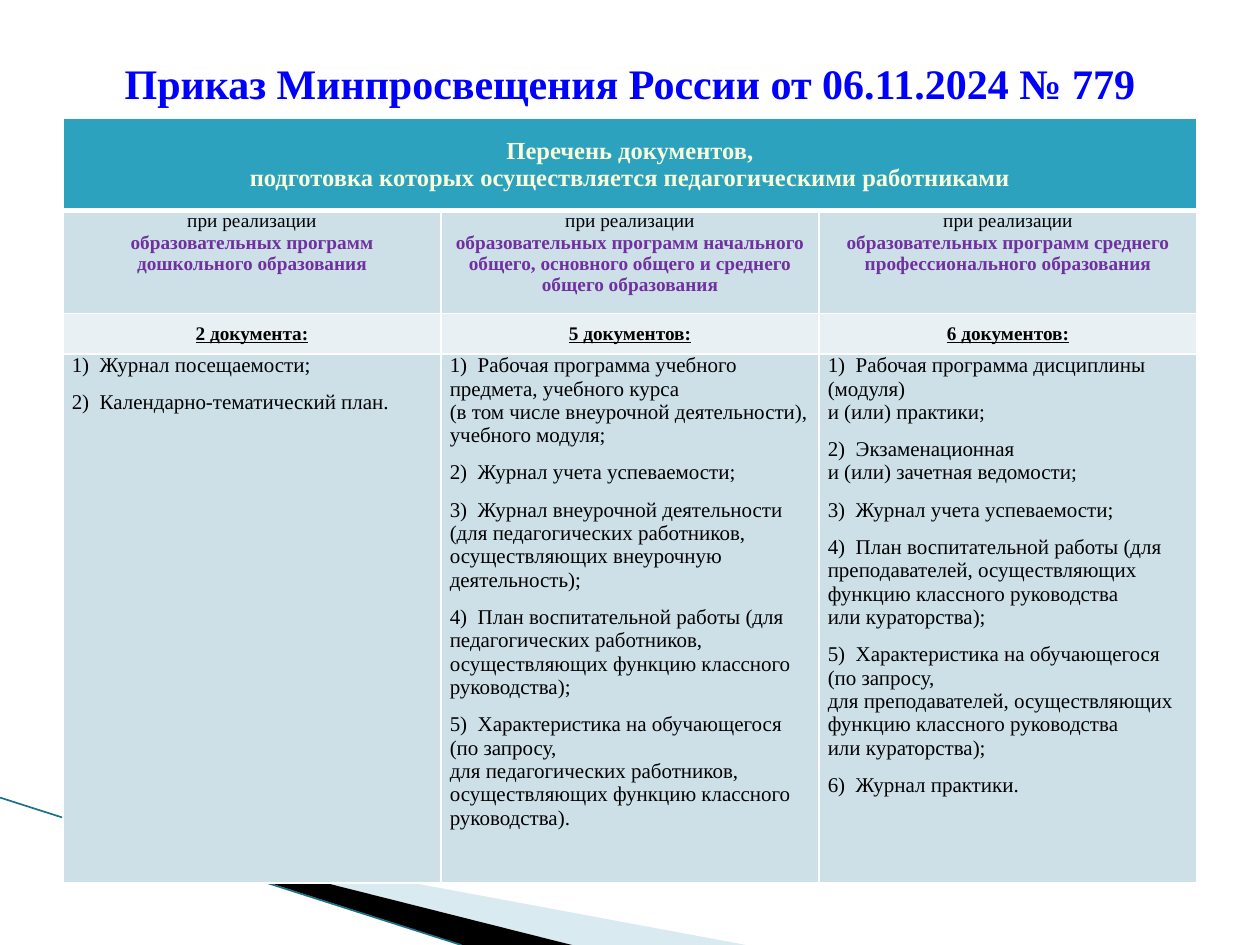
from copy import deepcopy

from lxml.etree import SubElement
from pptx import Presentation
from pptx.dml.color import RGBColor
from pptx.enum.shapes import MSO_CONNECTOR
from pptx.enum.text import MSO_ANCHOR, MSO_AUTO_SIZE, PP_ALIGN
from pptx.oxml.ns import qn
from pptx.util import Inches, Pt

FONT = "Times New Roman"
ROW_HEIGHTS = [0.73, 0.82, 0.32, 4.2]
COLUMN_WIDTH = 3
NUMBER_GAP = "  "

HEADING = ["Перечень документов,", "подготовка которых осуществляется педагогическими работниками"]
PROGRAMS = [
    (
        "образовательных программ дошкольного образования",
        "2 документа:",
        ["Журнал посещаемости;", "Календарно-тематический план."],
    ),
    (
        "образовательных программ начального общего, основного общего и среднего общего образования",
        "5 документов:",
        [
            "Рабочая программа учебного предмета, учебного курса \n"
            "(в том числе внеурочной деятельности), учебного модуля;",
            "Журнал учета успеваемости;",
            "Журнал внеурочной деятельности \n"
            "(для педагогических работников, осуществляющих внеурочную деятельность);",
            "План воспитательной работы (для педагогических работников, "
            "осуществляющих функцию классного руководства);",
            "Характеристика на обучающегося (по запросу, \n"
            "для педагогических работников, осуществляющих функцию классного руководства).",
        ],
    ),
    (
        "образовательных программ среднего профессионального образования",
        "6 документов:",
        [
            "Рабочая программа дисциплины (модуля) \nи (или) практики;",
            "Экзаменационная \nи (или) зачетная ведомости;",
            "Журнал учета успеваемости;",
            "План воспитательной работы (для преподавателей, осуществляющих "
            "функцию классного руководства \nили кураторства);",
            "Характеристика на обучающегося (по запросу, \n"
            "для преподавателей, осуществляющих функцию классного руководства \nили кураторства);",
            "Журнал практики.",
        ],
    ),
]


def color(hex_value):
    return RGBColor.from_string(hex_value)


def write(frame, text, first=False, size=12, hex_color="000000", bold=False,
          underline=False, align=PP_ALIGN.LEFT, after=0):
    paragraph = frame.paragraphs[0] if first else frame.add_paragraph()
    paragraph.text = text
    paragraph.alignment = align
    paragraph.space_after = Pt(after)
    for run in paragraph.runs:
        run.font.name = FONT
        run.font.size = Pt(size)
        run.font.bold = bold
        run.font.underline = underline
        run.font.color.rgb = color(hex_color)
    for line_break in paragraph._p.findall(qn("a:br")):
        line_break.append(deepcopy(paragraph.runs[0]._r.rPr))


def add_border(cell, side, width):
    border = SubElement(cell._tc.get_or_add_tcPr(), qn(f"a:ln{side}"), w=str(Pt(width)))
    fill = SubElement(border, qn("a:solidFill"))
    SubElement(fill, qn("a:srgbClr"), val="FFFFFF")


def format_cell(cell, row, hex_fill, anchor):
    widths = {"L": 1, "R": 1, "T": 3 if row == 1 else 1, "B": 3 if row == 0 else 1}
    for side, width in widths.items():
        add_border(cell, side, width)
    cell.fill.solid()
    cell.fill.fore_color.rgb = color(hex_fill)
    cell.vertical_anchor = anchor
    cell.margin_left = cell.margin_right = Inches(0.07)
    cell.margin_top = cell.margin_bottom = 0


def add_wedge(slide, points, hex_fill, opacity=100):
    corners = [(Inches(x), Inches(y)) for x, y in points]
    builder = slide.shapes.build_freeform(*corners[0])
    builder.add_line_segments(corners[1:], close=True)
    wedge = builder.convert_to_shape()
    wedge.shadow.inherit = False
    wedge.line.fill.background()
    wedge.fill.solid()
    wedge.fill.fore_color.rgb = color(hex_fill)
    if opacity < 100:
        tint = wedge._element.spPr.find(qn("a:solidFill"))[0]
        SubElement(tint, qn("a:alpha"), val=str(opacity * 1000))


def add_edge(slide, start, end, hex_color):
    edge = slide.shapes.add_connector(
        MSO_CONNECTOR.STRAIGHT, *[Inches(value) for value in (*start, *end)])
    edge.line.color.rgb = color(hex_color)
    edge.line.width = Pt(0.95)
    SubElement(edge._element.spPr, qn("a:effectLst"))


def fill_title(slide, text):
    title = slide.shapes.title
    title.left, title.top = Inches(0.5), Inches(0.3)
    title.width, title.height = Inches(9), Inches(0.72)
    frame = title.text_frame
    frame.auto_size = MSO_AUTO_SIZE.NONE
    frame.vertical_anchor = MSO_ANCHOR.MIDDLE
    write(frame, text, first=True, size=24, hex_color="0000FF", bold=True, align=PP_ALIGN.CENTER)


def add_documents_table(slide):
    table = slide.shapes.add_table(
        len(ROW_HEIGHTS), len(PROGRAMS), Inches(0.5), Inches(0.94),
        Inches(COLUMN_WIDTH * len(PROGRAMS)), Inches(sum(ROW_HEIGHTS))).table
    for column in table.columns:
        column.width = Inches(COLUMN_WIDTH)
    fills = ["2DA2BF", "CDE0E8", "E8F0F4", "CDE0E8"]
    anchors = [MSO_ANCHOR.MIDDLE, MSO_ANCHOR.TOP] * 2
    for row, height in enumerate(ROW_HEIGHTS):
        table.rows[row].height = Inches(height)
        for cell in table.rows[row].cells:
            format_cell(cell, row, fills[row], anchors[row])

    heading = table.cell(0, 0)
    heading.merge(table.cell(0, len(PROGRAMS) - 1))
    for index, line in enumerate(HEADING):
        write(heading.text_frame, line, first=index == 0, size=14, hex_color="F8FEDA",
              bold=True, align=PP_ALIGN.CENTER)

    for column, (program, count, documents) in enumerate(PROGRAMS):
        scope, total, listing = [table.cell(row, column).text_frame for row in (1, 2, 3)]
        write(scope, "при реализации", first=True, size=11, align=PP_ALIGN.CENTER)
        write(scope, program, size=11, hex_color="7030A0", bold=True, align=PP_ALIGN.CENTER)
        write(total, count, first=True, size=11, bold=True, underline=True, align=PP_ALIGN.CENTER)
        for number, document in enumerate(documents, 1):
            write(listing, f"{number}){NUMBER_GAP}{document}", first=number == 1, after=8)


def main():
    presentation = Presentation()
    presentation.slide_width, presentation.slide_height = Inches(10), Inches(7.5)
    slide = presentation.slides.add_slide(presentation.slide_layouts[5])
    add_wedge(slide, [(0.55, 6.5), (5.92, 7.5), (4.54, 7.5)], "A0CBDC", opacity=40)
    add_wedge(slide, [(0.53, 6.49), (4.54, 7.5), (3.67, 7.5)], "000000")
    add_edge(slide, (0, 6.33), (3.66, 7.5), "1B7286")
    fill_title(slide, "Приказ Минпросвещения России от 06.11.2024 № 779")
    add_documents_table(slide)
    presentation.save("out.pptx")


if __name__ == "__main__":
    main()
